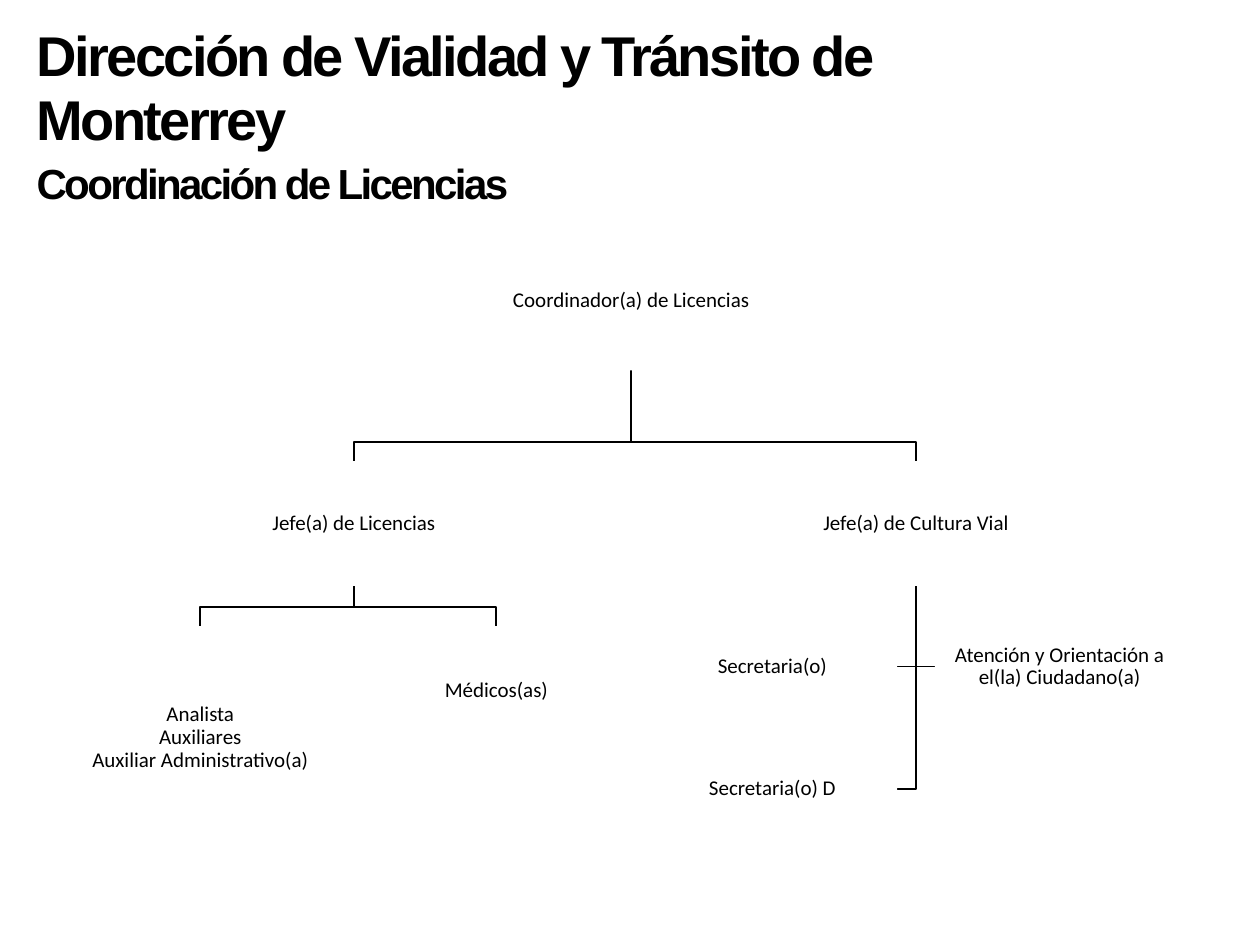
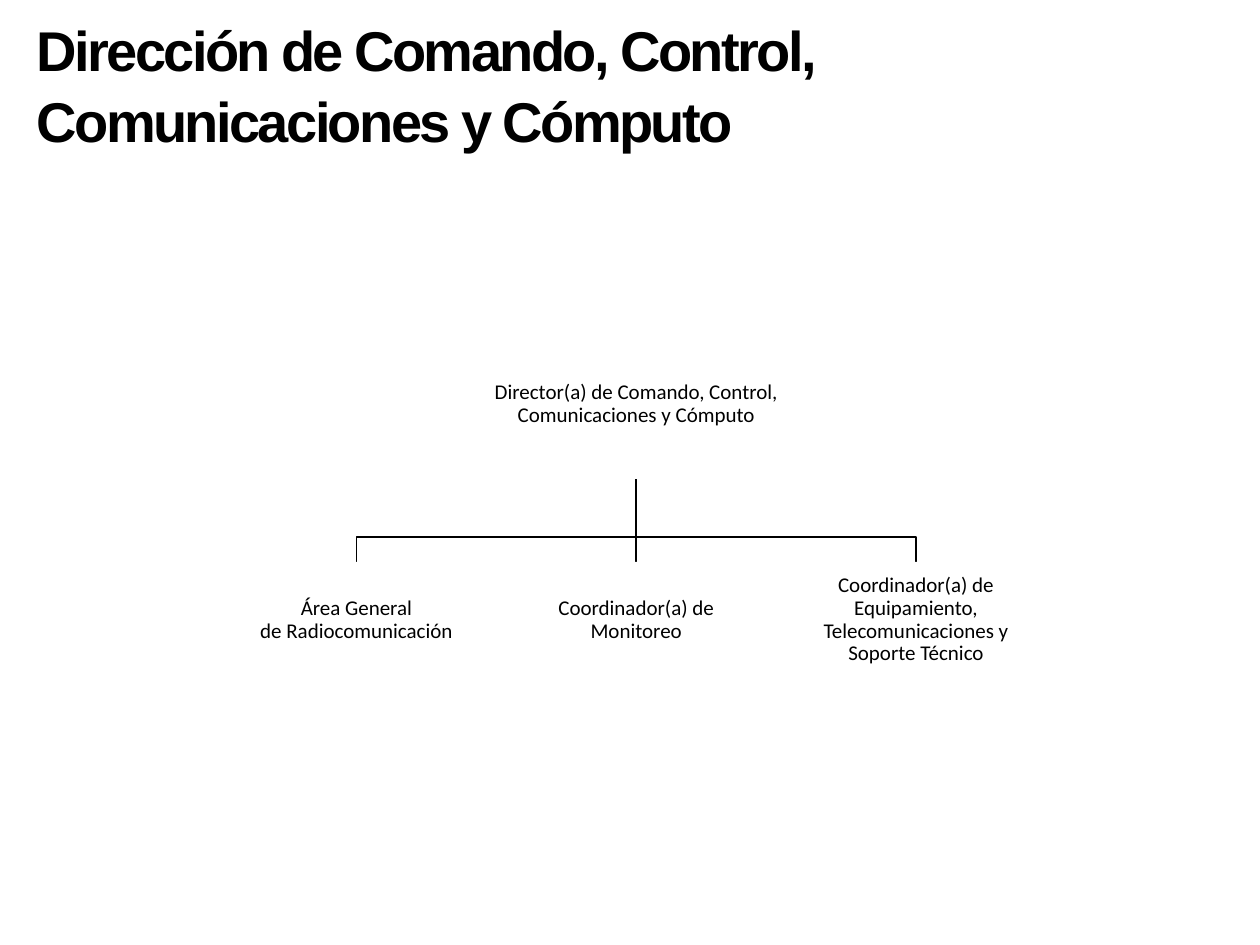
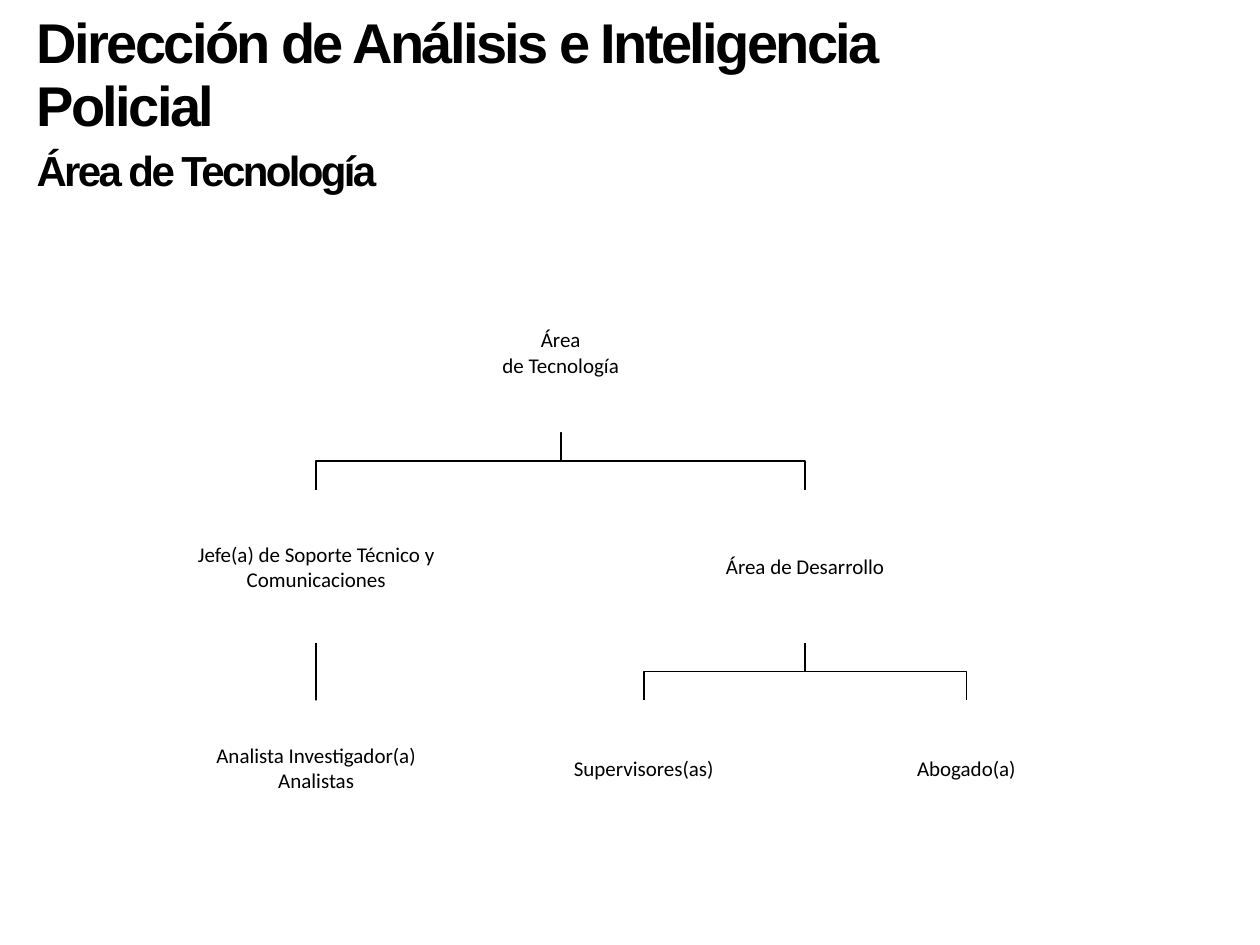
from dataclasses import dataclass

from lxml import etree
from pptx import Presentation
from pptx.dml.color import RGBColor
from pptx.enum.shapes import MSO_CONNECTOR, MSO_SHAPE
from pptx.enum.text import MSO_ANCHOR, MSO_AUTO_SIZE, PP_ALIGN
from pptx.oxml.ns import qn
from pptx.util import Inches, Pt

RECTANGLE = MSO_SHAPE.RECTANGLE
STRAIGHT = MSO_CONNECTOR.STRAIGHT
TOP, MIDDLE = MSO_ANCHOR.TOP, MSO_ANCHOR.MIDDLE
LEFT, CENTER = PP_ALIGN.LEFT, PP_ALIGN.CENTER
NO_AUTOFIT = MSO_AUTO_SIZE.NONE

BLACK, WHITE = "000000", "FFFFFF"
TITLE_FONT, BOX_FONT = "Arial", "Calibri"
TITLE_ONLY = 5


@dataclass(frozen=True)
class Post:
    """A post in the chart; its children hang below it or at its sides."""
    text: str
    center: float
    top: float
    width: float
    height: float
    children: tuple["Post", ...] = ()
    at_side: bool = False

    @property
    def bottom(self) -> float:
        return self.top + self.height


@dataclass(frozen=True)
class ChartPage:
    title: str
    title_top: float
    title_height: float
    root: Post
    drop: float  # from the horizontal bar down to the child
    subtitle: str = ""
    title_spacing: float = 0.94
    box_spacing: float = 0.9


def color(value: str) -> RGBColor:
    return RGBColor.from_string(value)


def add_text(para, text: str, *, font: str, size: float, bold: bool = False,
             tracking: float = 0, align=LEFT, spacing: float = 1) -> None:
    para.alignment = align
    para.line_spacing = spacing
    span = para.add_run()
    span.text = text
    span.font.name = font
    span.font.size = Pt(size)
    span.font.bold = bold
    span.font.color.rgb = color(BLACK)
    if tracking:
        span._r.get_or_add_rPr().set("spc", str(round(tracking * 100)))


def add_title(page, content: ChartPage) -> None:
    title = page.shapes.title
    title.left, title.top = Inches(0.19), Inches(content.title_top)
    title.width, title.height = Inches(7.46), Inches(content.title_height)
    frame = title.text_frame
    frame.word_wrap = True
    frame.auto_size = NO_AUTOFIT
    frame.vertical_anchor = TOP
    style = dict(font=TITLE_FONT, bold=True, tracking=-1.5)
    add_text(frame.paragraphs[0], content.title, size=32,
             spacing=content.title_spacing, **style)
    if content.subtitle:
        add_text(frame.add_paragraph(), content.subtitle, size=24,
                 spacing=1.1, **style)


def add_link(page, points: list[tuple[float, float]]) -> None:
    corners = [(Inches(x), Inches(y)) for x, y in points]
    if len(corners) == 2:
        link = page.shapes.add_connector(STRAIGHT, *corners[0], *corners[1])
        etree.SubElement(link._element.spPr, qn("a:effectLst"))
    else:
        builder = page.shapes.build_freeform(*corners[0])
        builder.add_line_segments(corners[1:], close=False)
        link = builder.convert_to_shape()
        link.fill.background()
        link.shadow.inherit = False
    link.line.color.rgb = color(BLACK)
    link.line.width = Pt(1)


def add_links(page, parent: Post, drop: float) -> None:
    start = (parent.center, parent.bottom)
    for child in parent.children:
        if child.at_side:
            level = child.top + child.height / 2
            toward = 1 if child.center < parent.center else -1
            edge = child.center + toward * child.width / 2
            points = [start, (parent.center, level), (edge, level)]
        elif child.center == parent.center:
            points = [start, (child.center, child.top)]
        else:
            bar = child.top - drop
            points = [start, (parent.center, bar), (child.center, bar),
                      (child.center, child.top)]
        add_link(page, points)
        add_links(page, child, drop)


def add_boxes(page, post: Post, spacing: float) -> None:
    box = page.shapes.add_shape(
        RECTANGLE, Inches(post.center - post.width / 2), Inches(post.top),
        Inches(post.width), Inches(post.height))
    box.shadow.inherit = False
    box.fill.solid()
    box.fill.fore_color.rgb = color(WHITE)
    box.line.fill.background()
    frame = box.text_frame
    frame.word_wrap = True
    frame.vertical_anchor = MIDDLE
    frame.margin_left = frame.margin_right = Inches(0.01)
    frame.margin_top = frame.margin_bottom = Inches(0.01)
    for index, line in enumerate(post.text.split("\n")):
        para = frame.add_paragraph() if index else frame.paragraphs[0]
        add_text(para, line, font=BOX_FONT, size=12, align=CENTER, spacing=spacing)
    for child in post.children:
        add_boxes(page, child, spacing)


# Licence office
licenses = Post("Jefe(a) de Licencias", 2.81, 3.66, 2.4, 0.99, (
    Post("Analista\nAuxiliares\nAuxiliar Administrativo(a)", 1.59, 4.97, 1.98, 1.77),
    Post("Médicos(as)", 3.94, 4.97, 1.98, 1.03),
))
road_culture = Post("Jefe(a) de Cultura Vial", 7.27, 3.66, 2.4, 0.99, (
    Post("Secretaria(o)", 6.13, 4.95, 1.98, 0.68, at_side=True),
    Post("Atención y Orientación a el(la) Ciudadano(a)", 8.41, 4.95, 1.98, 0.68,
         at_side=True),
    Post("Secretaria(o) D", 6.13, 5.92, 1.98, 0.68, at_side=True),
))
coordinator = Post("Coordinador(a) de Licencias", 5.01, 1.83, 2.77, 1.11,
                   (licenses, road_culture))

# Command and communications
command_areas = (
    "Área General\nde Radiocomunicación",
    "Coordinador(a) de Monitoreo",
    "Coordinador(a) de Equipamiento, Telecomunicaciones y Soporte Técnico",
)
command_center, command_step = 5.05, 2.22
director = Post(
    "Director(a) de Comando, Control, Comunicaciones y Cómputo",
    command_center, 2.62, 2.55, 1.18,
    tuple(Post(text, command_center + (index - 1) * command_step, 4.46, 1.84, 0.92)
          for index, text in enumerate(command_areas)))

# Technology area
support = Post("Jefe(a) de Soporte Técnico y Comunicaciones", 2.51, 3.89, 2.42, 1.21, (
    Post("Analista Investigador(a)\nAnalistas", 2.51, 5.56, 2.16, 1.07),
))
development = Post("Área de Desarrollo", 6.39, 3.89, 2.42, 1.21, (
    Post("Supervisores(as)", 5.11, 5.56, 2.1, 1.08),
    Post("Abogado(a)", 7.67, 5.56, 2.1, 1.08),
))
technology = Post("Área\nde Tecnología", 4.45, 2.16, 3.59, 1.27,
                  (support, development))

PAGES = (
    ChartPage("Dirección de Vialidad y Tránsito de Monterrey", 0.16, 1.47,
              coordinator, 0.15, subtitle="Coordinación de Licencias"),
    ChartPage("Dirección de Comando, Control, Comunicaciones y Cómputo", 0.05, 1.18,
              director, 0.2, title_spacing=1.05),
    ChartPage("Dirección de Análisis e Inteligencia Policial", 0.05, 1.47,
              technology, 0.23, subtitle="Área de Tecnología", box_spacing=1),
)


def main() -> None:
    deck = Presentation()
    deck.slide_width, deck.slide_height = Inches(10), Inches(7.5)
    for content in PAGES:
        page = deck.slides.add_slide(deck.slide_layouts[TITLE_ONLY])
        add_title(page, content)
        add_links(page, content.root, content.drop)
        add_boxes(page, content.root, content.box_spacing)
    deck.save("out.pptx")


if __name__ == "__main__":
    main()
